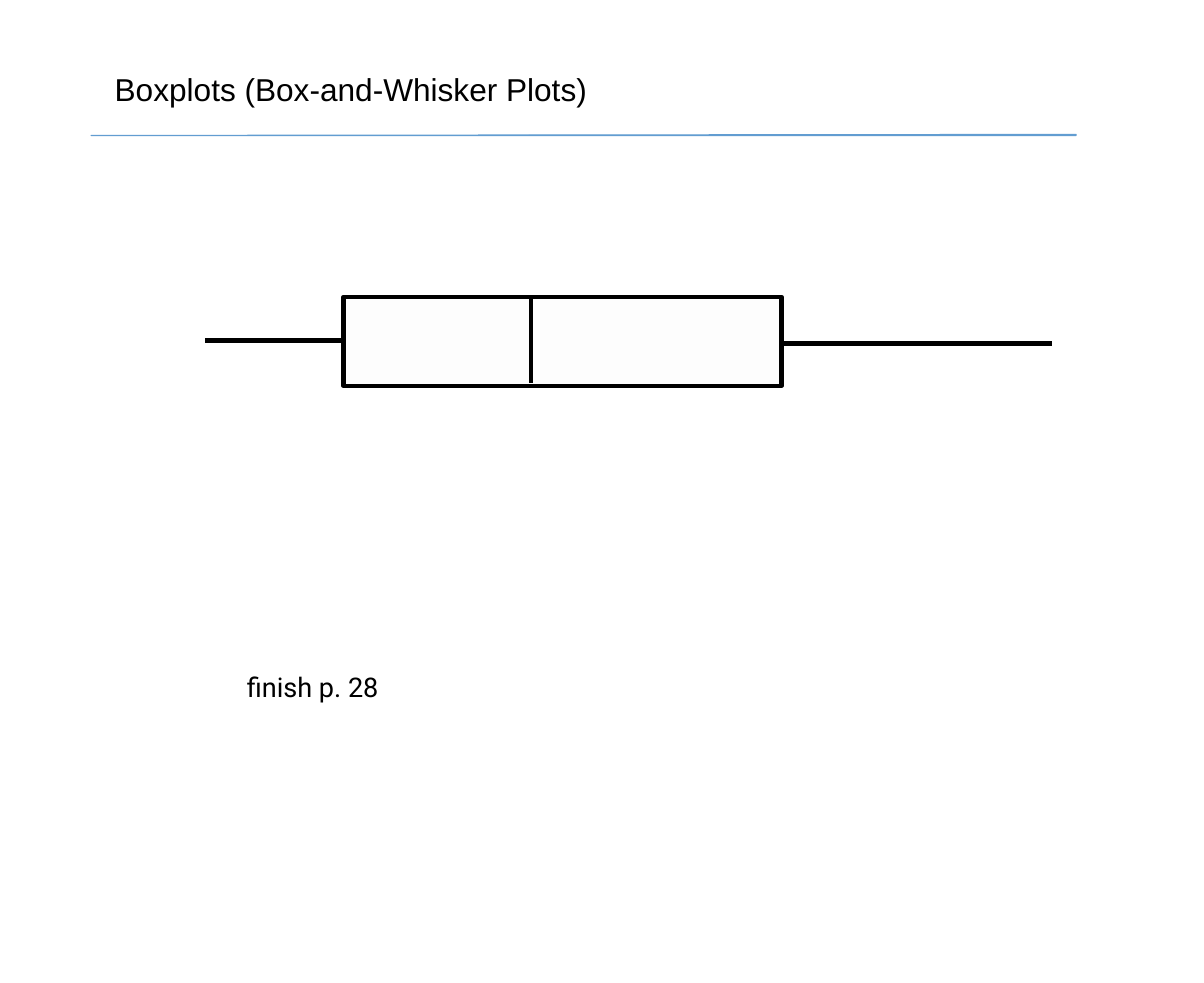
from dataclasses import dataclass

from lxml.etree import SubElement
from pptx import Presentation
from pptx.dml.color import RGBColor as RGB
from pptx.enum.shapes import MSO_CONNECTOR as Link
from pptx.oxml.ns import qn
from pptx.util import Inches, Pt


@dataclass(frozen=True)
class Theme:
    ink: RGB = RGB(0, 0, 0)
    rule: RGB = RGB(0x62, 0x9D, 0xD1)
    box: RGB = RGB(0xFD, 0xFD, 0xFD)
    head: Pt = Pt(21)
    note: Pt = Pt(18)
    line: Pt = Pt(3)
    hair: Pt = Pt(0)


THEME = Theme()


def add_text(slide, text, area, font):
    box = slide.shapes.add_textbox(*map(Inches, area))
    box.text_frame.word_wrap = True
    run = box.text_frame.paragraphs[0].add_run()
    run.text = text
    run.font.color.rgb = THEME.ink
    for key, value in font.items():
        setattr(run.font, key, value)


def add_form(slide, points, fill, color, width):
    start, *rest = [tuple(map(Inches, point)) for point in points]
    pen = slide.shapes.build_freeform(*start)
    pen.add_line_segments(rest, close=True)
    form = pen.convert_to_shape()
    form.shadow.inherit = False
    form.fill.solid()
    form.fill.fore_color.rgb = fill
    form.line.color.rgb = color
    form.line.width = width


def add_line(slide, start, end):
    line = slide.shapes.add_connector(Link.STRAIGHT, *map(Inches, start + end))
    line.line.color.rgb = THEME.ink
    line.line.width = THEME.line
    SubElement(line._element.spPr, qn("a:effectLst"))


def main():
    deck = Presentation()
    for key, value in {"slide_width": 11.11, "slide_height": 9.07}.items():
        setattr(deck, key, Inches(value))
    slide = deck.slides.add_slide(deck.slide_layouts[6])

    rule = [(9.93, 1.24), (9.93, 1.25), (0.84, 1.25)]
    add_form(slide, rule, THEME.rule, THEME.rule, THEME.hair)
    add_text(slide, "Boxplots (Box-and-Whisker Plots)", (0.96, 0.6, 5.98, 0.45),
             {"name": "Arial", "size": THEME.head})

    left, right, top, base = 3.17, 7.21, 2.74, 3.56
    box = [(left, top), (right, top), (right, base), (left, base)]
    add_form(slide, box, THEME.box, THEME.ink, THEME.line)
    for start, end in (
        ((7.19, 3.17), (9.71, 3.17)),
        ((3.18, 3.14), (1.89, 3.14)),
        ((4.9, 2.75), (4.9, 3.53)),
    ):
        add_line(slide, start, end)

    add_text(slide, "finish p. 28", (2.18, 6.14, 1.81, 0.4),
             {"name": "Roboto", "size": THEME.note})
    deck.save("out.pptx")


if __name__ == "__main__":
    main()
